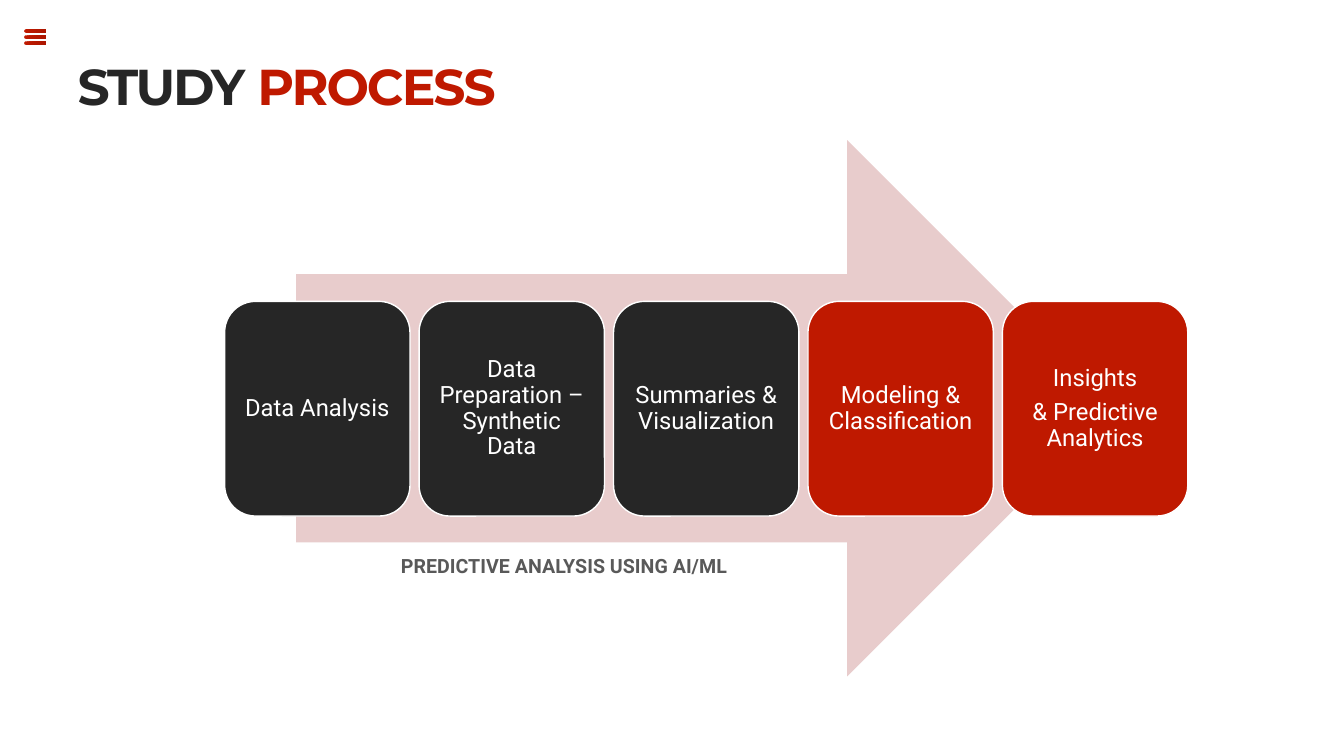
from dataclasses import dataclass

from pptx import Presentation
from pptx.dml.color import RGBColor
from pptx.enum.shapes import MSO_SHAPE
from pptx.enum.text import MSO_ANCHOR, PP_ALIGN
from pptx.util import Inches, Pt

RIGHT_ARROW = MSO_SHAPE.RIGHT_ARROW
ROUNDED = MSO_SHAPE.ROUNDED_RECTANGLE
MIDDLE, TOP = MSO_ANCHOR.MIDDLE, MSO_ANCHOR.TOP
CENTER, JUSTIFY = PP_ALIGN.CENTER, PP_ALIGN.JUSTIFY

COLORS = {
    "dark": "262626",
    "red": "BF1900",
    "deep_red": "AC1600",
    "pink": "E8CCCC",
    "gray": "595959",
    "white": "FFFFFF",
}


@dataclass(frozen=True)
class Box:
    left: float
    top: float
    width: float
    height: float

    def lengths(self) -> tuple:
        return tuple(map(Inches, (self.left, self.top, self.width, self.height)))


@dataclass(frozen=True)
class Step:
    paragraphs: tuple[str, ...]
    color: str


STEPS = (
    Step(("Data Analysis",), "dark"),
    Step(("Data Preparation – Synthetic Data",), "dark"),
    Step(("Summaries & Visualization",), "dark"),
    Step(("Modeling & Classification",), "red"),
    Step(("Insights", "& Predictive Analytics"), "red"),
)
FIRST_CARD = Box(2.23, 2.99, 1.84, 2.13)
CARD_PITCH = 1.93
MENU_BAR = Box(0.24, 0.29, 0.22, 0.035)
MENU_PITCH = 0.06


def rgb(name: str) -> RGBColor:
    return RGBColor.from_string(COLORS[name])


def add_panel(slide, preset, box: Box, color: str, line: str | None = None):
    shape = slide.shapes.add_shape(preset, *box.lengths())
    shape.shadow.inherit = False
    shape.fill.solid()
    shape.fill.fore_color.rgb = rgb(color)
    if line:
        shape.line.color.rgb = rgb(line)
        shape.line.width = Pt(1)
    else:
        shape.line.fill.background()
    return shape


def set_frame(shape, margin: float, anchor):
    frame = shape.text_frame
    frame.word_wrap = True
    frame.vertical_anchor = anchor
    frame.margin_left = frame.margin_right = Inches(margin)
    frame.margin_top = frame.margin_bottom = Inches(margin)
    return frame


def add_run(paragraph, text: str, *, size: float, color: str, font: str = "Roboto",
            bold: bool = False, spacing: float = 0) -> None:
    run = paragraph.add_run()
    run.text = text
    run.font.name = font
    run.font.size = Pt(size)
    run.font.bold = bold
    run.font.color.rgb = rgb(color)
    if spacing:
        run.font._element.set("spc", str(round(spacing * 100)))


def add_menu_icon(slide) -> None:
    for index in range(3):
        box = Box(MENU_BAR.left, MENU_BAR.top + index * MENU_PITCH,
                  MENU_BAR.width, MENU_BAR.height)
        bar = add_panel(slide, ROUNDED, box, "red")
        bar.adjustments[0] = 0.5
        bar.fill.gradient()
        bar.fill.gradient_angle = 0
        for stop, color in zip(bar.fill.gradient_stops, ("red", "deep_red")):
            stop.color.rgb = rgb(color)


def add_title(slide) -> None:
    title = slide.shapes.add_textbox(*Box(0.45, 0.5, 4.79, 0.71).lengths())
    paragraph = set_frame(title, 0.05, TOP).paragraphs[0]
    paragraph.alignment = CENTER
    for text, color in (("STUDY ", "dark"), ("PROCESS", "red")):
        add_run(paragraph, text, size=36, color=color, font="Montserrat",
                bold=True, spacing=-1.5)


def add_step(slide, index: int, step: Step) -> None:
    box = Box(FIRST_CARD.left + index * CARD_PITCH, FIRST_CARD.top,
              FIRST_CARD.width, FIRST_CARD.height)
    card = add_panel(slide, ROUNDED, box, step.color, line="white")
    frame = set_frame(card, 0.07, MIDDLE)
    for number, text in enumerate(step.paragraphs):
        paragraph = frame.add_paragraph() if number else frame.paragraphs[0]
        paragraph.alignment = CENTER
        paragraph.line_spacing = 0.9
        paragraph.space_after = Pt(6)
        add_run(paragraph, text, size=17, color="white")


def add_caption(slide) -> None:
    caption = slide.shapes.add_textbox(*Box(3.98, 5.38, 3.46, 0.35).lengths())
    paragraph = set_frame(caption, 0, TOP).paragraphs[0]
    paragraph.alignment = JUSTIFY
    paragraph.line_spacing = 1.5
    add_run(paragraph, "PREDICTIVE ANALYSIS USING AI/ML", size=14, color="gray", bold=True)


def main() -> None:
    presentation = Presentation()
    presentation.slide_width = Inches(13.34)
    presentation.slide_height = Inches(7.5)
    slide = presentation.slides.add_slide(presentation.slide_layouts[6])

    # Header
    add_menu_icon(slide)
    add_title(slide)

    # Process arrow with its steps
    add_panel(slide, RIGHT_ARROW, Box(2.94, 1.39, 8.13, 5.32), "pink")
    for index, step in enumerate(STEPS):
        add_step(slide, index, step)

    # Caption under the steps
    add_caption(slide)
    presentation.save("out.pptx")


if __name__ == "__main__":
    main()
